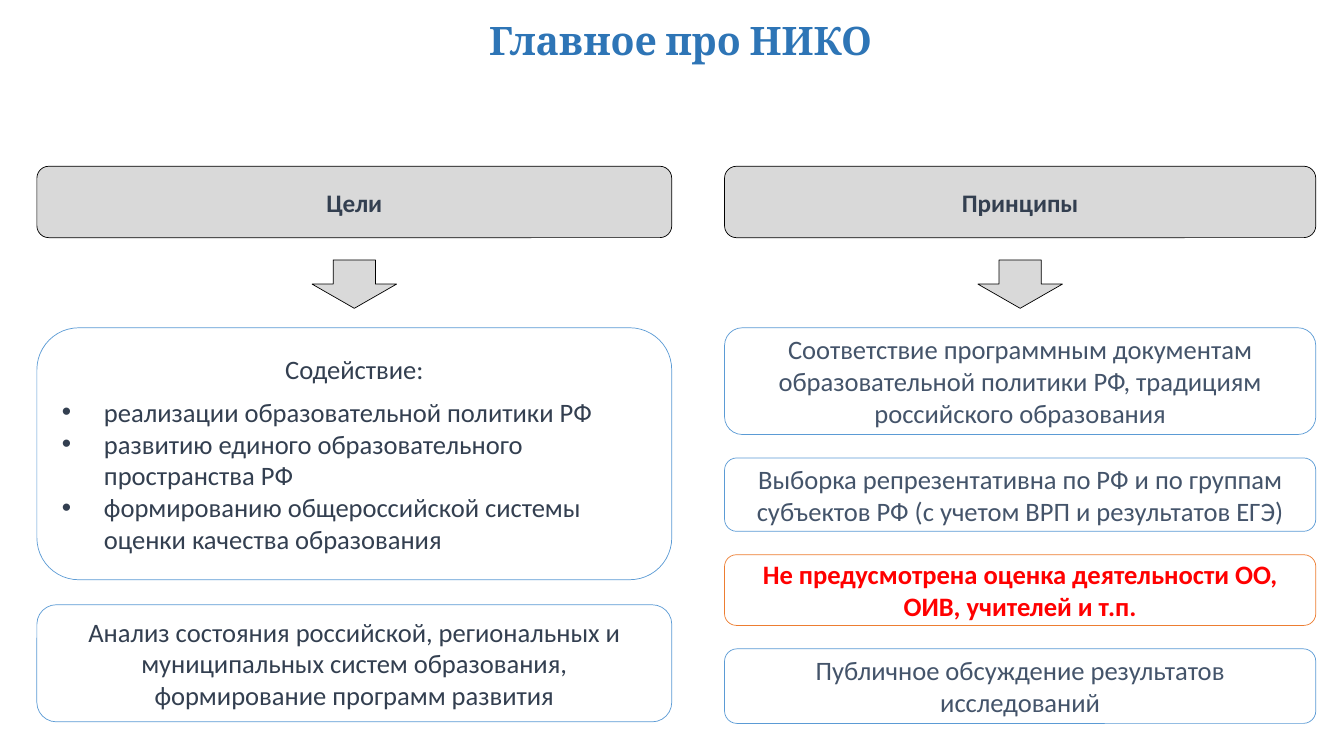
from lxml.etree import SubElement
from pptx import Presentation
from pptx.dml.color import RGBColor
from pptx.enum.shapes import MSO_SHAPE
from pptx.enum.text import MSO_ANCHOR, MSO_AUTO_SIZE, PP_ALIGN
from pptx.oxml.ns import qn
from pptx.util import Cm, Pt

BLACK, GREY, RED = "000000", "D9D9D9", "FF0000"
BLUE, ORANGE, TITLE_BLUE = "5B9BD5", "ED7D31", "2E75B6"
DARK, SLATE = "333F50", "44546A"

HEADER_TOP, HEADER_HEIGHT = 4.19, 1.8
ARROW_TOP, ARROW_WIDTH, ARROW_HEIGHT = 6.55, 2.13, 1.22
CARDS_TOP = 8.26
LIST_INSET = 0.3  # keeps the list clear of the rounded corners
LIST_INDENT = Cm(1.06)

FRAME = {
    "margin_left": Cm(0.33), "margin_right": Cm(0.33),
    "margin_top": Cm(0.18), "margin_bottom": Cm(0.18),
    "word_wrap": True, "auto_size": MSO_AUTO_SIZE.NONE,
    "vertical_anchor": MSO_ANCHOR.MIDDLE,
}
CENTRED = {"alignment": PP_ALIGN.CENTER, "space_before": Pt(0)}
LISTED = {"alignment": PP_ALIGN.LEFT, "space_before": Pt(0)}
HEADING = {"name": "Calibri", "size": Pt(18), "bold": True}
PLAIN = {"name": "Calibri", "size": Pt(19), "bold": False}
STRONG = PLAIN | {"bold": True}

INTRO = "Содействие:"
GOALS = [
    "реализации образовательной политики РФ",
    "развитию единого образовательного пространства РФ",
    "формированию общероссийской системы оценки качества образования",
]
ANALYSIS = ("Анализ состояния российской, региональных и муниципальных систем "
            "образования, формирование программ развития")
# height, text, line colour, text colour, font
PRINCIPLES = [
    (2.69, "Соответствие программным документам образовательной политики РФ, "
           "традициям российского образования", BLUE, SLATE, PLAIN),
    (1.85, "Выборка репрезентативна по РФ и по группам субъектов РФ "
           "(с учетом ВРП и результатов ЕГЭ)", BLUE, SLATE, PLAIN),
    (1.78, "Не предусмотрена оценка деятельности ОО, ОИВ, учителей и т.п.",
     ORANGE, RED, STRONG),
    (1.88, "Публичное обсуждение результатов исследований", BLUE, SLATE, PLAIN),
]


def colour(value):
    return RGBColor.from_string(value)


def apply(target, values):
    for name, value in values.items():
        setattr(target, name, value)


def place(box, left, top, width, height):
    apply(box, {"left": Cm(left), "top": Cm(top),
                "width": Cm(width), "height": Cm(height)})


def write(para, text, font, text_colour, layout):
    span = para.add_run()
    span.text = text
    apply(span.font, font)
    span.font.color.rgb = colour(text_colour)
    apply(para, layout)


def add_figure(page, kind, left, top, width, height, line, fill=None):
    box = page.shapes.add_shape(kind, Cm(left), Cm(top), Cm(width), Cm(height))
    box.shadow.inherit = False
    box.line.color.rgb = colour(line)
    box.line.width = Pt(0.5)
    if fill:
        box.fill.solid()
        box.fill.fore_color.rgb = colour(fill)
    else:
        box.fill.background()
    return box


def add_card(page, left, top, width, height, text, line, text_colour, font, fill=None):
    box = add_figure(page, MSO_SHAPE.ROUNDED_RECTANGLE,
                     left, top, width, height, line, fill)
    apply(box.text_frame, FRAME)
    write(box.text_frame.paragraphs[0], text, font, text_colour, CENTRED)


def add_header(page, left, width, text):
    """Grey column heading with a block arrow centred under it."""
    add_card(page, left, HEADER_TOP, width, HEADER_HEIGHT,
             text, BLACK, DARK, HEADING, GREY)
    add_figure(page, MSO_SHAPE.DOWN_ARROW, left + (width - ARROW_WIDTH) / 2,
               ARROW_TOP, ARROW_WIDTH, ARROW_HEIGHT, BLACK, GREY)


def add_title(page):
    box = page.shapes.title
    place(box, 5.54, 0.41, 23.22, 1.45)
    apply(box.text_frame, {"word_wrap": True, "auto_size": MSO_AUTO_SIZE.NONE,
                           "vertical_anchor": MSO_ANCHOR.TOP})
    write(box.text_frame.paragraphs[0], "Главное про НИКО",
          {"name": "Cambria", "size": Pt(28), "bold": True}, TITLE_BLUE,
          CENTRED | {"line_spacing": 0.9})


def add_goal_list(page, left, top, width, height):
    """Outlined frame holding an introduction and the bulleted goals."""
    add_figure(page, MSO_SHAPE.ROUNDED_RECTANGLE, left, top, width, height, BLUE)
    body = page.placeholders[1]
    place(body, left + LIST_INSET, top + LIST_INSET,
          width - 2 * LIST_INSET, height - 2 * LIST_INSET)
    frame = body.text_frame
    apply(frame, FRAME)
    intro = frame.paragraphs[0]
    write(intro, INTRO, PLAIN, DARK, CENTRED | {"space_after": Pt(8)})
    settings = intro._p.get_or_add_pPr()
    apply_indent(settings, 0, 0)
    SubElement(settings, qn("a:buNone"))
    for goal in GOALS:
        para = frame.add_paragraph()
        write(para, goal, PLAIN, DARK, LISTED)
        settings = para._p.get_or_add_pPr()
        apply_indent(settings, LIST_INDENT, -LIST_INDENT)
        SubElement(settings, qn("a:buFont")).set("typeface", "Arial")
        SubElement(settings, qn("a:buChar")).set("char", "•")


def apply_indent(settings, margin, indent):
    settings.set("marL", str(int(margin)))
    settings.set("indent", str(int(indent)))


def add_goals(page, left, width):
    add_header(page, left, width, "Цели")
    add_goal_list(page, left, CARDS_TOP, width, 6.35)
    add_card(page, left, CARDS_TOP + 6.98, width, 2.95, ANALYSIS, BLUE, DARK, PLAIN)


def add_principles(page, left, width, gap=0.59):
    add_header(page, left, width, "Принципы")
    top = CARDS_TOP
    for height, text, line, text_colour, font in PRINCIPLES:
        add_card(page, left, top, width, height, text, line, text_colour, font)
        top += height + gap


def main():
    deck = Presentation()
    deck.slide_width, deck.slide_height = Cm(33.87), Cm(19.05)
    page = deck.slides.add_slide(deck.slide_layouts[1])
    add_title(page)
    add_goals(page, 0.93, 16)
    add_principles(page, 18.26, 14.9)
    deck.save("out.pptx")


if __name__ == "__main__":
    main()
